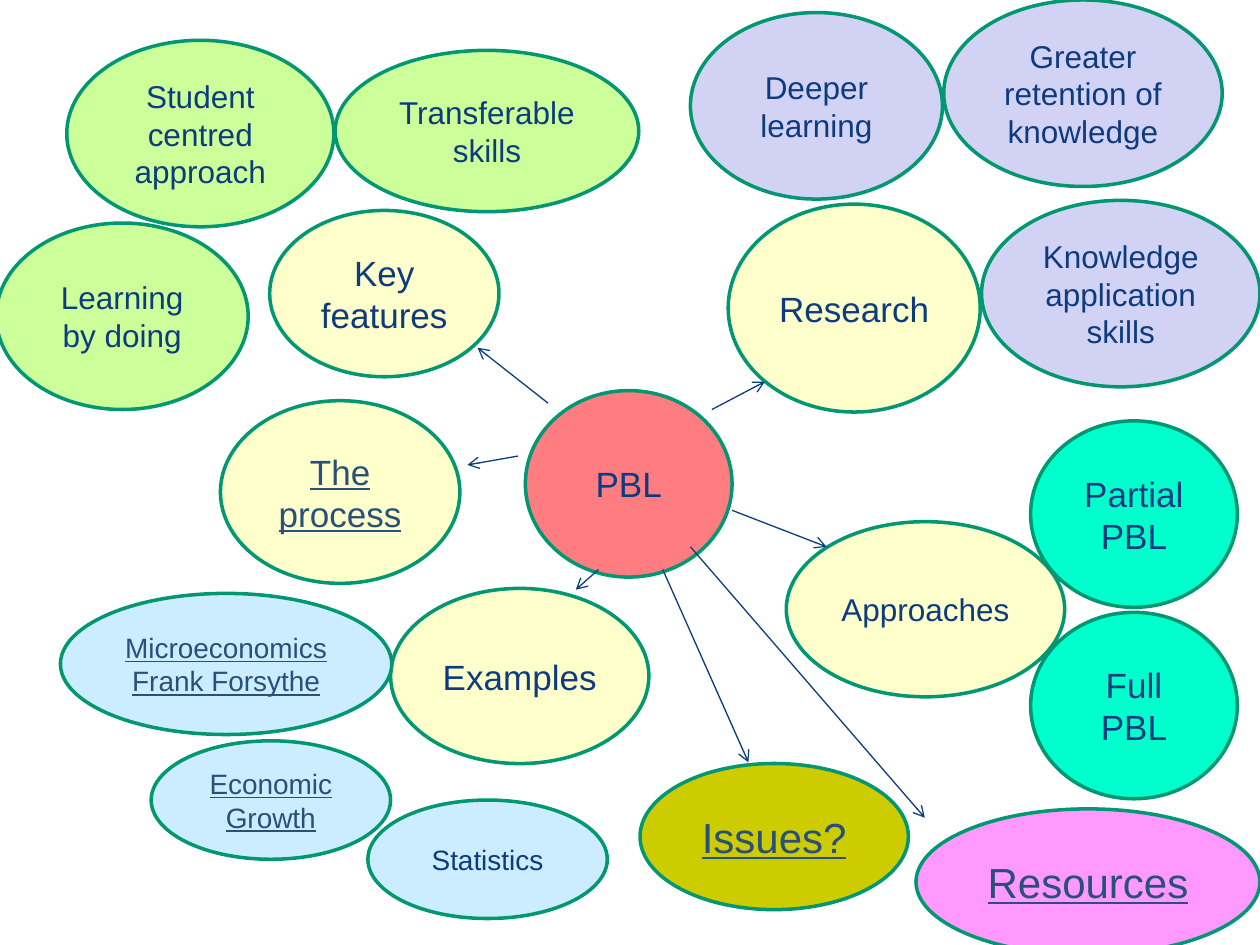
from lxml import etree
from pptx import Presentation
from pptx import util as u
from pptx.dml.color import RGBColor
from pptx.enum import shapes, text
from pptx.oxml import ns

PX = u.Inches(1) // 100  # 100 px to the inch

COLORS = {
    "centre": "FF7C80", "topic": "FFFFCC", "feature": "CCFF99",
    "approach": "00FFCC", "research": "D2D2F4", "example": "CCECFF",
    "issues": "CCCC00", "resources": "FF99FF",
    "outline": "009771", "ink": "0D3B7F", "linked": "285078",
}

# label, colour, text size, underlined, (left, top, width, height)
BUBBLES = [
    ("PBL", "centre", 20, False, (417, 310, 164, 148)),
    ("Key features", "topic", 20, False, (214, 167, 182, 132)),
    ("Learning by doing", "feature", 18, False, (-3, 177, 200, 148)),
    ("Student centred approach", "feature", 18, False, (53, 32, 212, 148)),
    ("Transferable skills", "feature", 18, False, (266, 40, 241, 128)),
    ("The process", "topic", 20, True, (175, 318, 190, 145)),
    ("Approaches", "topic", 18, False, (624, 414, 221, 139)),
    ("Partial\vPBL", "approach", 20, False, (818, 334, 164, 148)),
    ("Full\nPBL", "approach", 20, False, (818, 486, 164, 148)),
    ("Research", "topic", 20, False, (578, 162, 200, 165)),
    ("Deeper learning", "research", 18, False, (548, 10, 200, 148)),
    ("Greater retention of knowledge", "research", 18, False, (749, 0, 221, 148)),
    ("Knowledge application skills", "research", 18, False, (779, 159, 221, 148)),
    ("Examples", "topic", 20, False, (310, 467, 205, 139)),
    ("Microeconomics \nFrank Forsythe", "example", 16, True, (48, 471, 263, 112)),
    ("Economic Growth", "example", 16, True, (120, 588, 190, 94)),
    ("Issues?", "issues", 24, True, (508, 606, 213, 116)),
    ("Resources", "resources", 24, True, (727, 642, 273, 116)),
    ("Statistics", "example", 16, False, (292, 635, 190, 94)),
]

# from x, from y, to x, to y
ARROWS = [
    (435, 320, 379, 276),
    (565, 325, 607, 303),
    (411, 362, 371, 369),
    (581, 405, 656, 434),
    (475, 452, 457, 468),
    (526, 452, 594, 605),
    (548, 434, 734, 649),
]


def rgb(name):
    return RGBColor.from_string(COLORS[name])


def scaled(lengths):
    return [length * PX for length in lengths]


def add_bubble(page, label, color, size, underlined, place):
    bubble = page.shapes.add_shape(shapes.MSO_SHAPE.OVAL, *scaled(place))
    bubble.shadow.inherit = False
    bubble.fill.solid()
    bubble.fill.fore_color.rgb = rgb(color)
    bubble.line.color.rgb = rgb("outline")
    bubble.line.width = u.Pt(2)

    frame = bubble.text_frame
    frame.word_wrap = True
    frame.vertical_anchor = text.MSO_ANCHOR.MIDDLE
    frame.text = label
    font_format = {"name": "Arial", "size": u.Pt(size), "underline": underlined}
    for para in frame.paragraphs:
        para.alignment = text.PP_ALIGN.CENTER
        for span in para.runs:
            for key, value in font_format.items():
                setattr(span.font, key, value)
            span.font.color.rgb = rgb("linked" if underlined else "ink")


def add_arrow(page, ends):
    arrow = page.shapes.add_connector(shapes.MSO_CONNECTOR.STRAIGHT, *scaled(ends))
    arrow.line.color.rgb = rgb("ink")
    arrow.line.width = u.Pt(0.75)
    etree.SubElement(arrow.line._get_or_add_ln(), ns.qn("a:tailEnd"), type="arrow")
    etree.SubElement(arrow._element.spPr, ns.qn("a:effectLst"))


def main():
    deck = Presentation()
    deck.slide_width, deck.slide_height = scaled((1000, 750))
    page = deck.slides.add_slide(deck.slide_layouts[6])
    for bubble in BUBBLES:
        add_bubble(page, *bubble)
    for ends in ARROWS:
        add_arrow(page, ends)
    deck.save("out.pptx")


if __name__ == "__main__":
    main()
